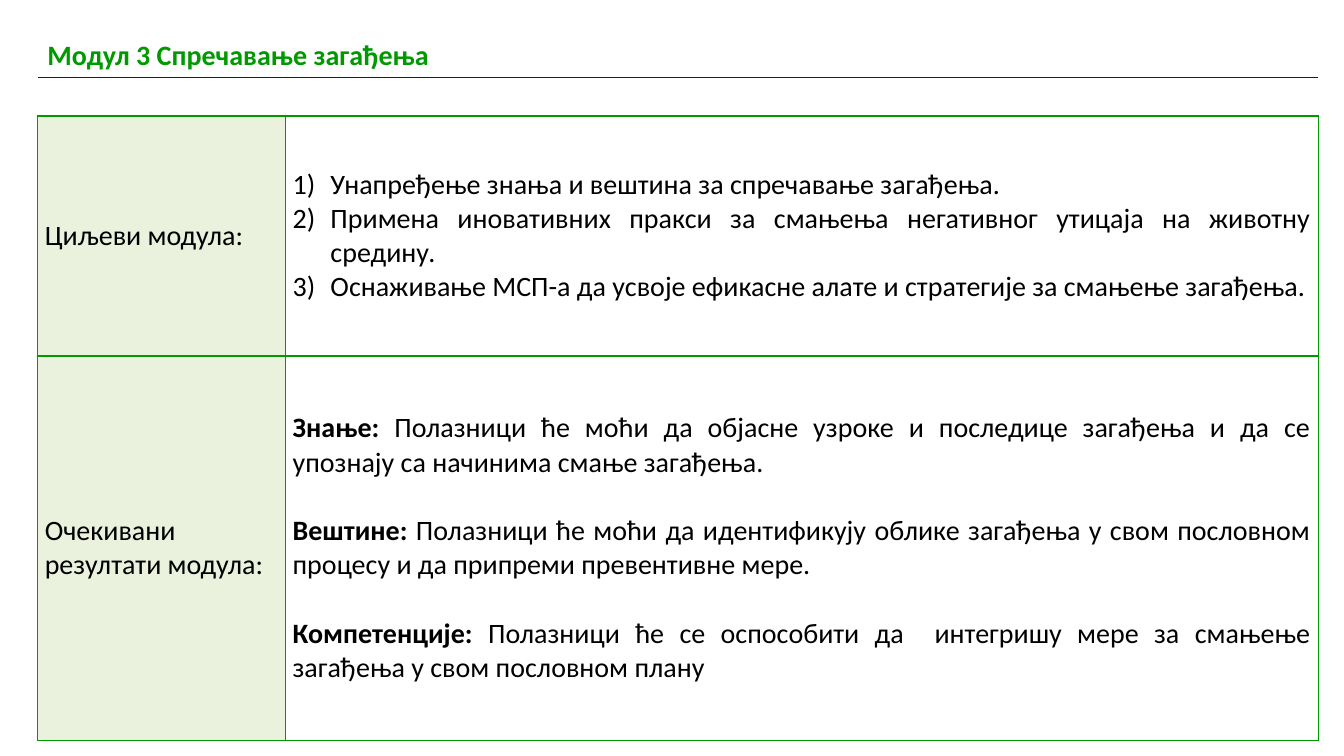
from lxml import etree
from pptx import Presentation
from pptx.dml.color import RGBColor
from pptx.enum.text import MSO_ANCHOR, PP_ALIGN
from pptx.oxml.ns import qn
from pptx.util import Pt

MIDDLE = MSO_ANCHOR.MIDDLE
JUSTIFY = PP_ALIGN.JUSTIFY
GREEN = RGBColor(0x00, 0x99, 0x00)
PALE_GREEN = RGBColor(0xEA, 0xF1, 0xDD)
NAVY = RGBColor(0x00, 0x20, 0x60)
BLACK = RGBColor(0x00, 0x00, 0x00)
WHITE = RGBColor(0xFF, 0xFF, 0xFF)

LEFT, WIDTH = 26.6, 915.1
LABEL_WIDTH = 177.1
ROW_HEIGHTS = [171.5, 274.6]
LINE_HEIGHT = 24.4
NUMBER_INDENT = 27

GOALS = [
    "Унапређење знања и вештина за спречавање загађења.",
    "Примена иновативних пракси за смањења негативног утицаја на животну средину.",
    "Оснаживање МСП-а да усвоје ефикасне алате и стратегије за смањење загађења.",
]
RESULTS = [
    ("Знање:", " Полазници ће моћи да објасне узроке и последице загађења "
     "и да се упознају са начинима смање загађења."),
    ("Вештине:", " Полазници ће моћи да идентификују облике загађења "
     "у свом пословном процесу и да припреми превентивне мере."),
    ("Компетенције:", " Полазници ће се оспособити да  интегришу мере "
     "за смањење загађења у свом пословном плану"),
]


def add_run(paragraph, text, color=BLACK, bold=False):
    run = paragraph.add_run()
    run.text = text
    run.font.name = "Calibri"
    run.font.size = Pt(20)
    run.font.bold = bold
    run.font.color.rgb = color


def set_borders(cell, color, bottom_color):
    """Draw 1 pt lines on all four sides of a cell."""
    properties = cell._tc.get_or_add_tcPr()
    sides = [("L", color), ("R", color), ("T", color), ("B", bottom_color)]
    for position, (side, side_color) in enumerate(sides):
        line = etree.Element(qn(f"a:ln{side}"), w=str(Pt(1)))
        fill = etree.SubElement(line, qn("a:solidFill"))
        etree.SubElement(fill, qn("a:srgbClr"), val=str(side_color))
        properties.insert(position, line)


presentation = Presentation()
presentation.slide_width = Pt(960)
presentation.slide_height = Pt(540)
slide = presentation.slides.add_slide(presentation.slide_layouts[6])

# Module title
title_table = slide.shapes.add_table(1, 1, Pt(LEFT), Pt(23.8), Pt(WIDTH), Pt(31)).table
title_table.first_row = title_table.horz_banding = False
title_cell = title_table.cell(0, 0)
title_cell.fill.background()
set_borders(title_cell, WHITE, NAVY)
add_run(title_cell.text_frame.paragraphs[0], "Модул 3 Спречавање загађења", GREEN, True)

# Goals and expected results
module_table = slide.shapes.add_table(
    2, 2, Pt(LEFT), Pt(82.8), Pt(WIDTH), Pt(sum(ROW_HEIGHTS))).table
module_table.first_row = module_table.horz_banding = False
module_table.columns[0].width = Pt(LABEL_WIDTH)
module_table.columns[1].width = Pt(WIDTH - LABEL_WIDTH)
for row, height in zip(module_table.rows, ROW_HEIGHTS):
    row.height = Pt(height)

for cell in module_table.iter_cells():
    cell.fill.background()
    set_borders(cell, GREEN, GREEN)
    cell.vertical_anchor = MIDDLE
    cell.margin_left = cell.margin_right = Pt(5.4)
    cell.margin_top = cell.margin_bottom = 0

for row_index, label in enumerate(["Циљеви модула:", "Очекивани резултати модула:"]):
    label_cell = module_table.cell(row_index, 0)
    label_cell.fill.solid()
    label_cell.fill.fore_color.rgb = PALE_GREEN
    paragraph = label_cell.text_frame.paragraphs[0]
    paragraph.alignment = JUSTIFY
    add_run(paragraph, label)

goals_frame = module_table.cell(0, 1).text_frame
for index, goal in enumerate(GOALS):
    paragraph = goals_frame.add_paragraph() if index else goals_frame.paragraphs[0]
    paragraph.alignment = JUSTIFY
    properties = paragraph._p.get_or_add_pPr()
    properties.set("marL", str(Pt(NUMBER_INDENT)))
    properties.set("indent", str(Pt(-NUMBER_INDENT)))
    etree.SubElement(properties, qn("a:buFont"), typeface="+mj-lt")
    etree.SubElement(properties, qn("a:buAutoNum"), type="arabicParenR")
    add_run(paragraph, goal)

results_frame = module_table.cell(1, 1).text_frame
for index, (heading, description) in enumerate(RESULTS):
    paragraph = results_frame.add_paragraph() if index else results_frame.paragraphs[0]
    paragraph.alignment = JUSTIFY
    if index:
        paragraph.space_before = Pt(LINE_HEIGHT)
    add_run(paragraph, heading, bold=True)
    add_run(paragraph, description)

presentation.save("out.pptx")
